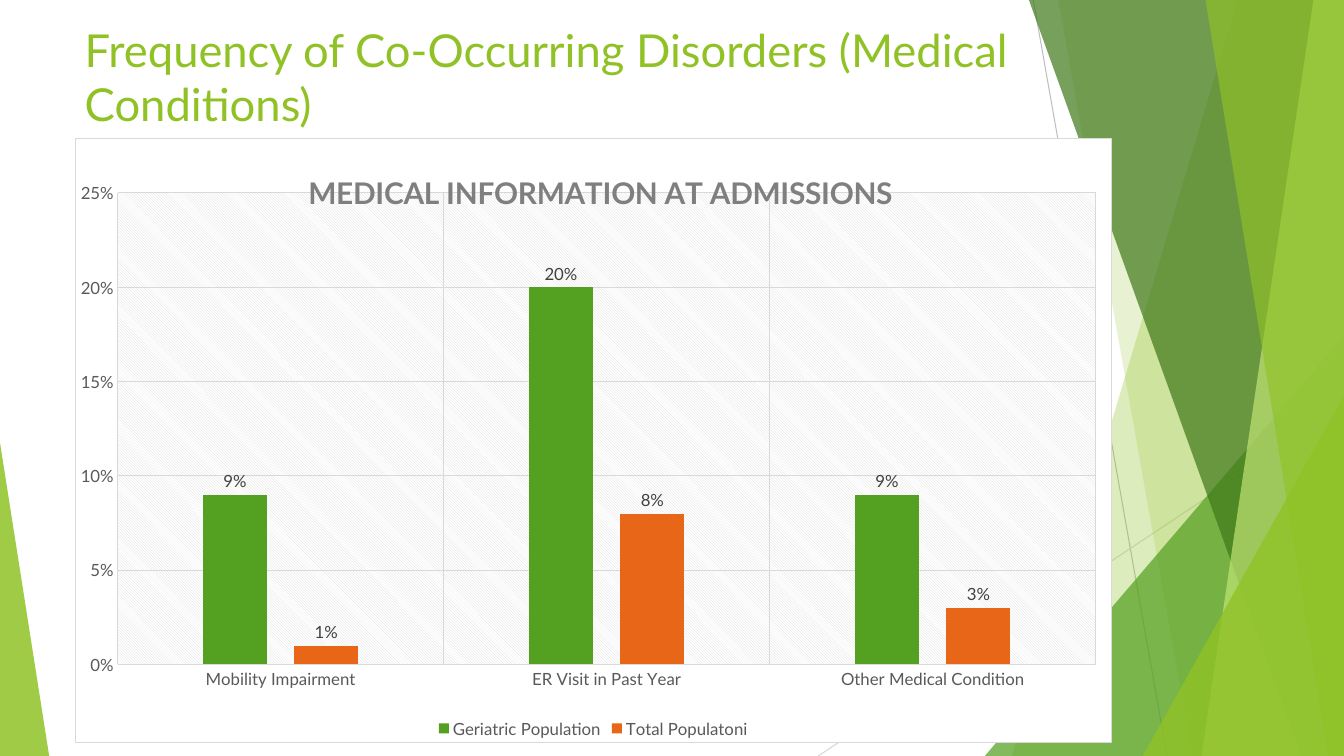
from lxml import etree
from pptx import Presentation
from pptx.chart.data import CategoryChartData
from pptx.dml.color import RGBColor
from pptx.enum.chart import XL_CHART_TYPE, XL_LABEL_POSITION, XL_LEGEND_POSITION, XL_TICK_MARK
from pptx.enum.shapes import MSO_CONNECTOR, MSO_SHAPE
from pptx.enum.text import MSO_ANCHOR, MSO_AUTO_SIZE, PP_ALIGN
from pptx.oxml import parse_xml
from pptx.oxml.ns import nsdecls, qn
from pptx.util import Cm, Pt

COLUMNS = XL_CHART_TYPE.COLUMN_CLUSTERED
OUTSIDE_END = XL_LABEL_POSITION.OUTSIDE_END
LEGEND_BOTTOM = XL_LEGEND_POSITION.BOTTOM
NO_TICK = XL_TICK_MARK.NONE
STRAIGHT = MSO_CONNECTOR.STRAIGHT
TRIANGLE = MSO_SHAPE.ISOSCELES_TRIANGLE

LIME = RGBColor(0x90, 0xC2, 0x26)
GREEN = RGBColor(0x54, 0xA0, 0x21)
DARK_GREEN = RGBColor(0x3F, 0x78, 0x19)
PALE_LIME = RGBColor(0xC0, 0xE4, 0x74)
ORANGE = RGBColor(0xE7, 0x66, 0x18)
SILVER = RGBColor(0xBF, 0xBF, 0xBF)
LIGHT_GRAY = RGBColor(0xD9, 0xD9, 0xD9)
TITLE_GRAY = RGBColor(0x7F, 0x7F, 0x7F)
AXIS_GRAY = RGBColor(0x59, 0x59, 0x59)
LABEL_GRAY = RGBColor(0x40, 0x40, 0x40)
FONT = "Lato"
WIDTH, HEIGHT = 33.87, 19.05


def write_text(text_frame, text, size, color, bold=False, align=PP_ALIGN.LEFT):
    paragraph = text_frame.paragraphs[0]
    paragraph.alignment = align
    run = paragraph.add_run()
    run.text = text
    run.font.name, run.font.size, run.font.bold = FONT, Pt(size), bold
    run.font.color.rgb = color


def place(element, position, **fractions):
    """Give a chart part a manual layout in fractions of the chart."""
    for old_layout in element.findall(qn("c:layout")):
        element.remove(old_layout)
    target = '<c:layoutTarget val="inner"/>' if "w" in fractions else ""
    modes = "".join(f'<c:{key}Mode val="edge"/>' for key in ("x", "y"))
    values = "".join(f'<c:{key} val="{value}"/>' for key, value in fractions.items())
    element.insert(position, parse_xml(
        f'<c:layout {nsdecls("c")}><c:manualLayout>{target}{modes}{values}'
        '</c:manualLayout></c:layout>'))


presentation = Presentation()
presentation.slide_width, presentation.slide_height = Cm(WIDTH), Cm(HEIGHT)
slide = presentation.slides.add_slide(presentation.slide_layouts[5])
shapes = slide.shapes

# Thin background lines
for x1, y1, x2, y2, color in [(26.04, 0, 29.41, HEIGHT, SILVER),
                              (WIDTH, 10.24, 20.62, HEIGHT, LIGHT_GRAY)]:
    line = shapes.add_connector(STRAIGHT, Cm(x1), Cm(y1), Cm(x2), Cm(y2))
    line.line.color.rgb = color
    line.line.width = Pt(0.75)
    etree.SubElement(line._element.spPr, qn("a:effectLst"))

# Translucent facets: bands are (top x, bottom x), triangles (left, top, width, apex)
facets = [
    ((31.19, 25.5), LIME, 30),
    ((26.67, 30.05), LIME, 20),
    ((24.82, 8.46, 9.05, 1), GREEN, 72),
    ((25.93, 32.79), DARK_GREEN, 70),
    ((33.1, 30.28), PALE_LIME, 70),
    ((30.38, 33.48), LIME, 65),
    ((28.8, 9.98, 5.07, 1), LIME, 80),
    ((0, 11.15, 1.24, 0), LIME, 85),
]
for geometry, color, opacity in facets:
    if len(geometry) == 2:
        top_x, bottom_x = geometry
        builder = shapes.build_freeform(Cm(top_x), Cm(0))
        builder.add_line_segments([(Cm(WIDTH), Cm(0)), (Cm(WIDTH), Cm(HEIGHT)),
                                   (Cm(bottom_x), Cm(HEIGHT))])
        facet = builder.convert_to_shape()
    else:
        left, top, width, apex = geometry
        facet = shapes.add_shape(TRIANGLE, Cm(left), Cm(top), Cm(width), Cm(HEIGHT - top))
        facet.adjustments[0] = apex
    facet.shadow.inherit = False
    facet.line.fill.background()
    facet.fill.solid()
    facet.fill.fore_color.rgb = color
    color_element = facet._element.spPr.find(f'{qn("a:solidFill")}/{qn("a:srgbClr")}')
    etree.SubElement(color_element, qn("a:alpha"), val=str(opacity * 1000))

# Title
title = shapes.title
title.left, title.top, title.width, title.height = Cm(1.88), Cm(0.43), Cm(24.38), Cm(2.77)
title.text_frame.word_wrap = True
title.text_frame.auto_size = MSO_AUTO_SIZE.NONE
title.text_frame.vertical_anchor = MSO_ANCHOR.TOP
write_text(title.text_frame, "Frequency of Co-Occurring Disorders (Medical Conditions)",
           size=32.4, color=LIME)

# Column chart
chart_data = CategoryChartData(number_format="0%")
chart_data.categories = ["Mobility Impairment", "ER Visit in Past Year",
                         "Other Medical Condition"]
chart_data.add_series("Geriatric Population", [0.09, 0.2, 0.09])
chart_data.add_series("Total Populatoni", [0.01, 0.08, 0.03])
chart = shapes.add_chart(COLUMNS, Cm(1.88), Cm(3.48), Cm(26.14), Cm(15.24), chart_data).chart
chart.font.name, chart.font.size = FONT, Pt(12)
chart.font.color.rgb = AXIS_GRAY

chart.has_title = True
write_text(chart.chart_title.text_frame, "MEDICAL INFORMATION AT ADMISSIONS",
           size=21.3, color=TITLE_GRAY, bold=True, align=PP_ALIGN.CENTER)
place(chart.chart_title._element, 1, x=0.22, y=0.045)
chart.has_legend = True
chart.legend.position = LEGEND_BOTTOM
chart.legend.include_in_layout = False

# Columns and their labels
plot = chart.plots[0]
plot.gap_width, plot.overlap, plot.vary_by_categories = 267, -43, False
for series, color in zip(plot.series, (GREEN, ORANGE)):
    series.format.fill.solid()
    series.format.fill.fore_color.rgb = color
    labels = series.data_labels
    labels.show_value = True
    labels.position = OUTSIDE_END
    labels.number_format, labels.number_format_is_linked = "0%", False
    labels.font.name, labels.font.size = FONT, Pt(12)
    labels.font.color.rgb = LABEL_GRAY

# Axes and gridlines
for axis in (chart.category_axis, chart.value_axis):
    axis.major_tick_mark = axis.minor_tick_mark = NO_TICK
    axis.has_major_gridlines = True
    for axis_format in (axis.format, axis.major_gridlines.format):
        axis_format.line.color.rgb = LIGHT_GRAY
        axis_format.line.width = Pt(0.75)
value_axis = chart.value_axis
value_axis.format.line.fill.background()
value_axis.minimum_scale, value_axis.maximum_scale, value_axis.major_unit = 0, 0.25, 0.05
value_axis.tick_labels.number_format = "0%"
value_axis.tick_labels.number_format_is_linked = False

# Hatched plot area on a white, bordered chart
chart_space = chart._chartSpace
plot_area = chart_space.chart.plotArea
place(plot_area, 0, x=0.041, y=0.09, w=0.944, h=0.781)
plot_area.append(parse_xml(
    f'<c:spPr {nsdecls("c", "a")}><a:pattFill prst="ltDnDiag">'
    f'<a:fgClr><a:srgbClr val="{LIGHT_GRAY}"/></a:fgClr>'
    '<a:bgClr><a:srgbClr val="FFFFFF"/></a:bgClr></a:pattFill></c:spPr>'))
chart_space.chart.addnext(parse_xml(
    f'<c:spPr {nsdecls("c", "a")}><a:solidFill><a:srgbClr val="FFFFFF"/></a:solidFill>'
    f'<a:ln w="{Pt(0.75)}"><a:solidFill><a:srgbClr val="{LIGHT_GRAY}"/></a:solidFill>'
    '</a:ln></c:spPr>'))

presentation.save("out.pptx")
